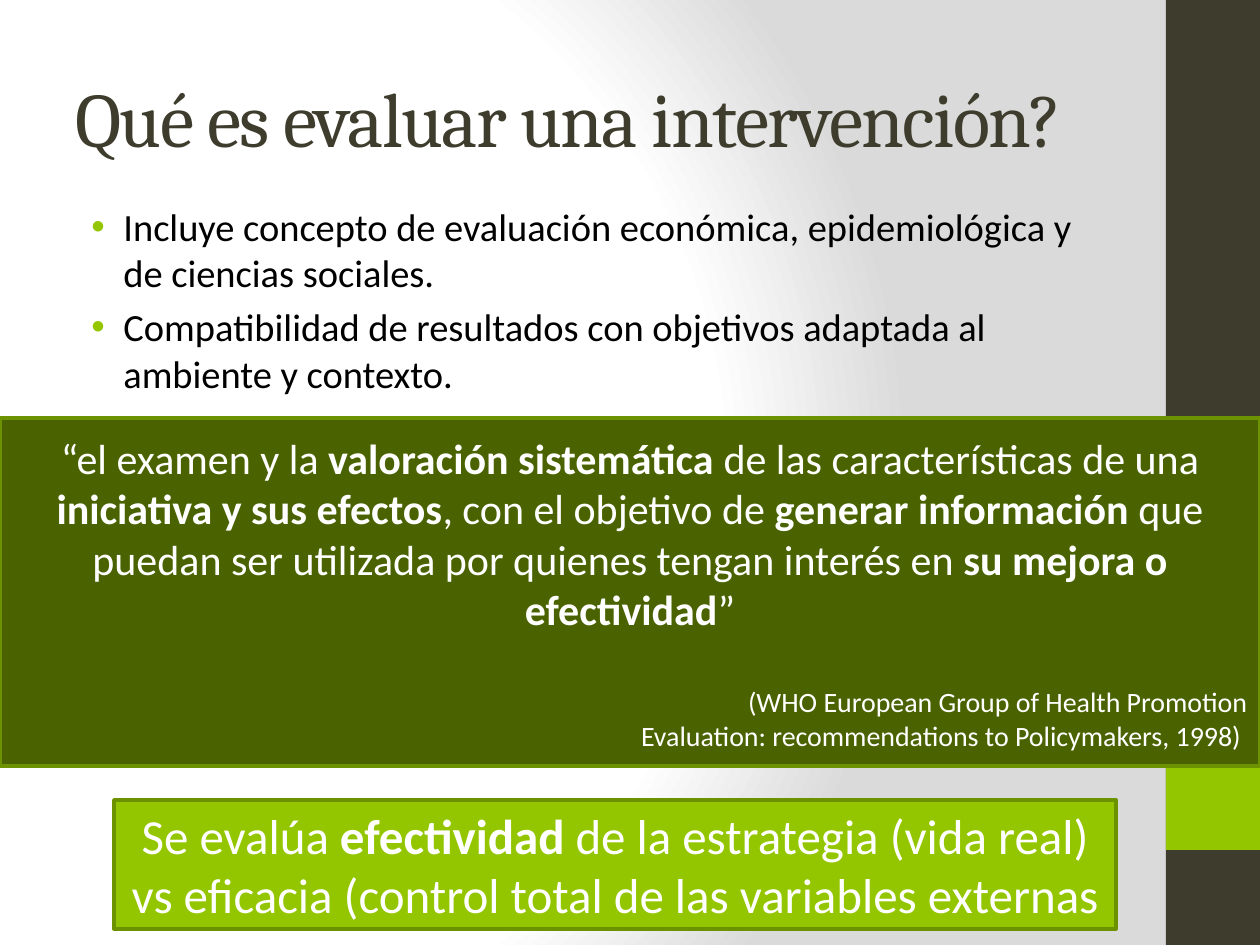
from dataclasses import dataclass

import lxml.etree
import pptx
import pptx.dml.color
import pptx.enum.shapes
import pptx.enum.text
import pptx.oxml
import pptx.oxml.ns
import pptx.util

EMU_PER_PX = 914400 / 126
COLORS = {
    "dark": "3E3D2D",
    "lime": "94C600",
    "forest": "4A6300",
    "edge": "6D9200",
    "black": "000000",
    "white": "FFFFFF",
    "mist": "DADADA",
}
ALIGN = pptx.enum.text.PP_ALIGN
ANCHOR = pptx.enum.text.MSO_ANCHOR
qn = pptx.oxml.ns.qn


@dataclass(frozen=True)
class Box:
    left: int
    top: int
    width: int
    height: int


@dataclass(frozen=True)
class Panel:
    box: Box
    fill: str
    edge: str | None = None


@dataclass(frozen=True)
class Run:
    text: str
    bold: bool = False


def px(length: int) -> int:
    return round(length * EMU_PER_PX)


def place(box: Box) -> tuple[int, ...]:
    return tuple(px(n) for n in (box.left, box.top, box.width, box.height))


def rgb(name: str) -> pptx.dml.color.RGBColor:
    return pptx.dml.color.RGBColor.from_string(COLORS[name])


def paint_background(slide) -> None:
    slide.background.fill.solid()
    solid = slide.element.find(".//" + qn("p:bgPr")).find(qn("a:solidFill"))
    stops = "".join(
        f'<a:gs pos="{percent * 1000}"><a:srgbClr val="{COLORS[name]}"/></a:gs>'
        for percent, name in ((0, "white"), (75, "white"), (100, "mist"))
    )
    gradient = pptx.oxml.parse_xml(
        f'<a:gradFill {pptx.oxml.ns.nsdecls("a")} rotWithShape="1">'
        f'<a:gsLst>{stops}</a:gsLst><a:path path="circle">'
        '<a:fillToRect l="20000" t="50000" r="100000" b="50000"/>'
        "</a:path></a:gradFill>"
    )
    solid.getparent().replace(solid, gradient)


def add_panel(slide, panel: Panel):
    rectangle = slide.shapes.add_shape(
        pptx.enum.shapes.MSO_SHAPE.RECTANGLE, *place(panel.box)
    )
    rectangle.shadow.inherit = False
    rectangle.fill.solid()
    rectangle.fill.fore_color.rgb = rgb(panel.fill)
    if panel.edge:
        rectangle.line.color.rgb = rgb(panel.edge)
        rectangle.line.width = pptx.util.Pt(2)
    else:
        rectangle.line.fill.background()
    return rectangle.text_frame


def add_text_area(slide, box: Box):
    return slide.shapes.add_textbox(*place(box)).text_frame


def write(frame, *runs: Run, size: float, color: str, font: str = "Calibri",
          align=ALIGN.LEFT, anchor=ANCHOR.MIDDLE, before: float = 0,
          tracking: int = 0, bullet: str | None = None) -> None:
    frame.word_wrap = True
    frame.vertical_anchor = anchor
    paragraph = frame.paragraphs[0]
    if paragraph.runs:
        paragraph = frame.add_paragraph()
    paragraph.alignment = align
    paragraph.space_before = pptx.util.Pt(before)
    if bullet:
        properties = paragraph._p.get_or_add_pPr()
        properties.set("marL", str(px(48)))
        properties.set("indent", str(px(-32)))
        tint = lxml.etree.SubElement(properties, qn("a:buClr"))
        lxml.etree.SubElement(tint, qn("a:srgbClr"), val=COLORS[bullet])
        lxml.etree.SubElement(properties, qn("a:buFont"), typeface="Arial")
        lxml.etree.SubElement(properties, qn("a:buChar"), char="•")
    for part in runs:
        run = paragraph.add_run()
        run.text = part.text
        run.font.name = font
        run.font.size = pptx.util.Pt(size)
        run.font.bold = part.bold
        run.font.color.rgb = rgb(color)
        if tracking:
            run.font._element.set("spc", str(tracking))


SIDEBAR = (
    Panel(Box(1166, 0, 94, 945), "dark"),
    Panel(Box(1166, 756, 94, 94), "lime"),
)
TITLE_BOX = Box(63, 38, 1092, 157)
POINTS_BOX = Box(63, 197, 1050, 661)
SUMMARY = Panel(Box(114, 800, 1002, 129), "lime", "edge")
DEFINITION = Panel(Box(0, 418, 1260, 348), "forest", "edge")

POINTS = (
    "Incluye concepto de evaluación económica, epidemiológica y de ciencias sociales.",
    "Compatibilidad de resultados con objetivos adaptada al ambiente y contexto.",
)
SUMMARY_TEXT = (
    Run("Se evalúa"),
    Run(" efectividad ", bold=True),
    Run("de la estrategia (vida real) vs eficacia (control total de las variables externas"),
)
QUOTE = (
    Run("“el examen y la "),
    Run("valoración sistemática ", bold=True),
    Run("de las características de una "),
    Run("iniciativa y sus efectos", bold=True),
    Run(", con el objetivo de "),
    Run("generar información ", bold=True),
    Run("que puedan ser utilizada por quienes tengan interés en "),
    Run("su mejora o efectividad", bold=True),
    Run("”"),
)
CITATION = (
    ("(WHO European Group of Health Promotion", 29),
    ("Evaluation: recommendations to Policymakers, 1998) ", 0),
)


def main() -> None:
    presentation = pptx.Presentation()
    presentation.slide_width = px(1260)
    presentation.slide_height = px(945)
    slide = presentation.slides.add_slide(presentation.slide_layouts[6])

    paint_background(slide)
    for band in SIDEBAR:
        add_panel(slide, band)

    write(add_text_area(slide, TITLE_BOX), Run("Qué es evaluar una intervención?"),
          size=44, color="dark", font="Cambria", tracking=-100)

    points = add_text_area(slide, POINTS_BOX)
    for point in POINTS:
        write(points, Run(point), size=22, color="black", anchor=ANCHOR.TOP,
              before=4.5, bullet="lime")

    write(add_panel(slide, SUMMARY), *SUMMARY_TEXT, size=28, color="white",
          align=ALIGN.CENTER)

    definition = add_panel(slide, DEFINITION)
    write(definition, *QUOTE, size=24, color="white", align=ALIGN.CENTER)
    for line, gap in CITATION:
        write(definition, Run(line), size=16, color="white", align=ALIGN.RIGHT,
              before=gap)

    presentation.save("out.pptx")


if __name__ == "__main__":
    main()
